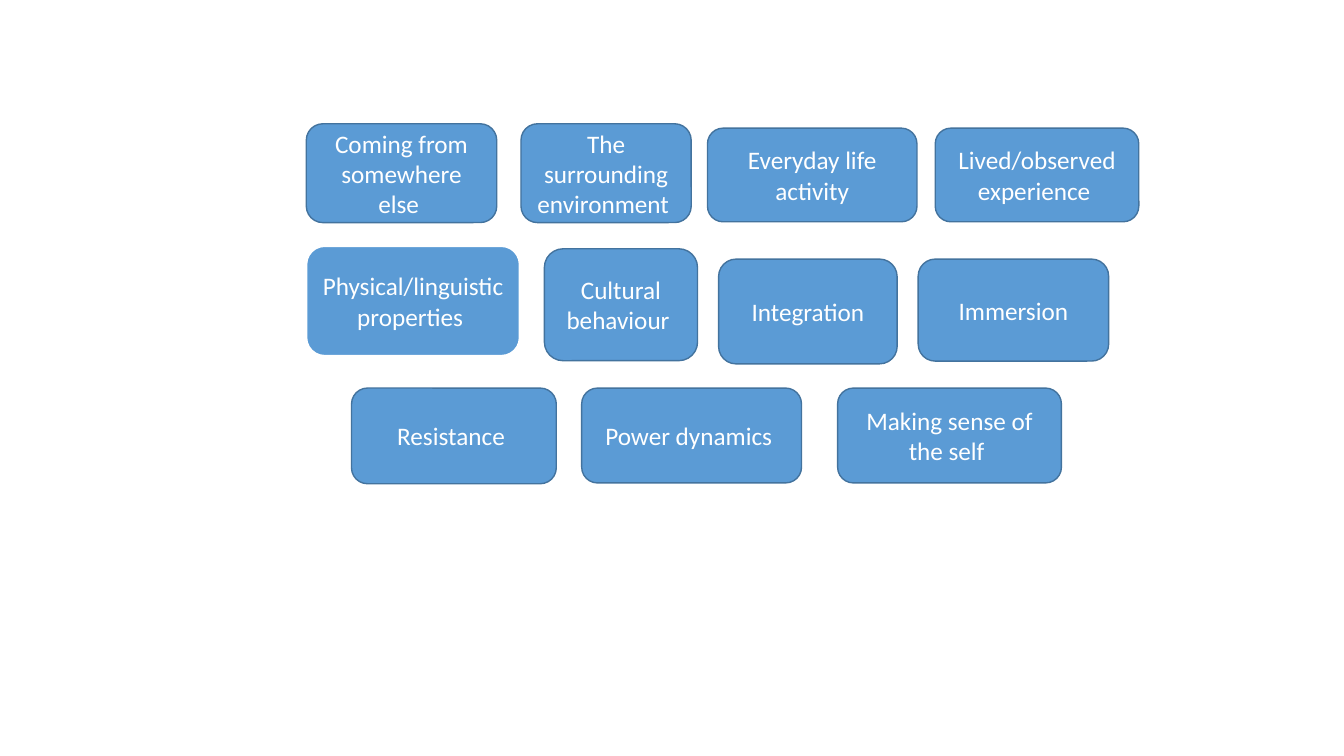
from dataclasses import dataclass

from pptx import Presentation
from pptx.dml.color import RGBColor
from pptx.enum.shapes import MSO_SHAPE
from pptx.enum.text import MSO_ANCHOR, PP_ALIGN
from pptx.util import Cm, Pt


@dataclass(frozen=True)
class Theme:
    font: str = "Calibri"
    text_size: Pt = Pt(18)
    text: RGBColor = RGBColor(0xFF, 0xFF, 0xFF)
    fill: RGBColor = RGBColor(0x5B, 0x9B, 0xD5)
    outline: RGBColor = RGBColor(0x43, 0x73, 0x9E)
    outline_width: Pt = Pt(1)
    light_outline: RGBColor = RGBColor(0xFF, 0xFF, 0xFF)
    light_outline_width: Pt = Pt(1.5)


theme = Theme()

# Each card: label, left, top, width, height in centimetres
cards = [
    ("Coming from somewhere else ", 7.72, 3.12, 4.8, 2.49),
    ("The surrounding environment ", 13.13, 3.12, 4.29, 2.49),
    ("Everyday life activity", 17.83, 3.23, 5.28, 2.36),
    ("Lived/observed experience ", 23.57, 3.23, 5.13, 2.36),
    ("Physical/linguistic properties ", 7.72, 6.2, 5.38, 2.77),
    ("Cultural behaviour ", 13.72, 6.27, 3.86, 2.82),
    ("Integration", 18.11, 6.53, 4.5, 2.64),
    ("Immersion", 23.14, 6.53, 4.8, 2.57),
    ("Resistance ", 8.86, 9.78, 5.16, 2.41),
    ("Power dynamics ", 14.66, 9.78, 5.54, 2.39),
    ("Making sense of the self ", 21.11, 9.78, 5.64, 2.39),
]
light_outlined = {"Physical/linguistic properties "}

presentation = Presentation()
presentation.slide_width = Cm(33.87)
presentation.slide_height = Cm(19.05)
slide = presentation.slides.add_slide(presentation.slide_layouts[6])

for label, left, top, width, height in cards:
    shape = slide.shapes.add_shape(
        MSO_SHAPE.ROUNDED_RECTANGLE, Cm(left), Cm(top), Cm(width), Cm(height)
    )
    shape.shadow.inherit = False
    shape.fill.solid()
    shape.fill.fore_color.rgb = theme.fill
    is_light = label in light_outlined
    shape.line.color.rgb = theme.light_outline if is_light else theme.outline
    shape.line.width = theme.light_outline_width if is_light else theme.outline_width

    text_frame = shape.text_frame
    text_frame.word_wrap = True
    text_frame.vertical_anchor = MSO_ANCHOR.MIDDLE
    paragraph = text_frame.paragraphs[0]
    paragraph.alignment = PP_ALIGN.CENTER
    run = paragraph.add_run()
    run.text = label
    run.font.name = theme.font
    run.font.size = theme.text_size
    run.font.color.rgb = theme.text

presentation.save("out.pptx")
